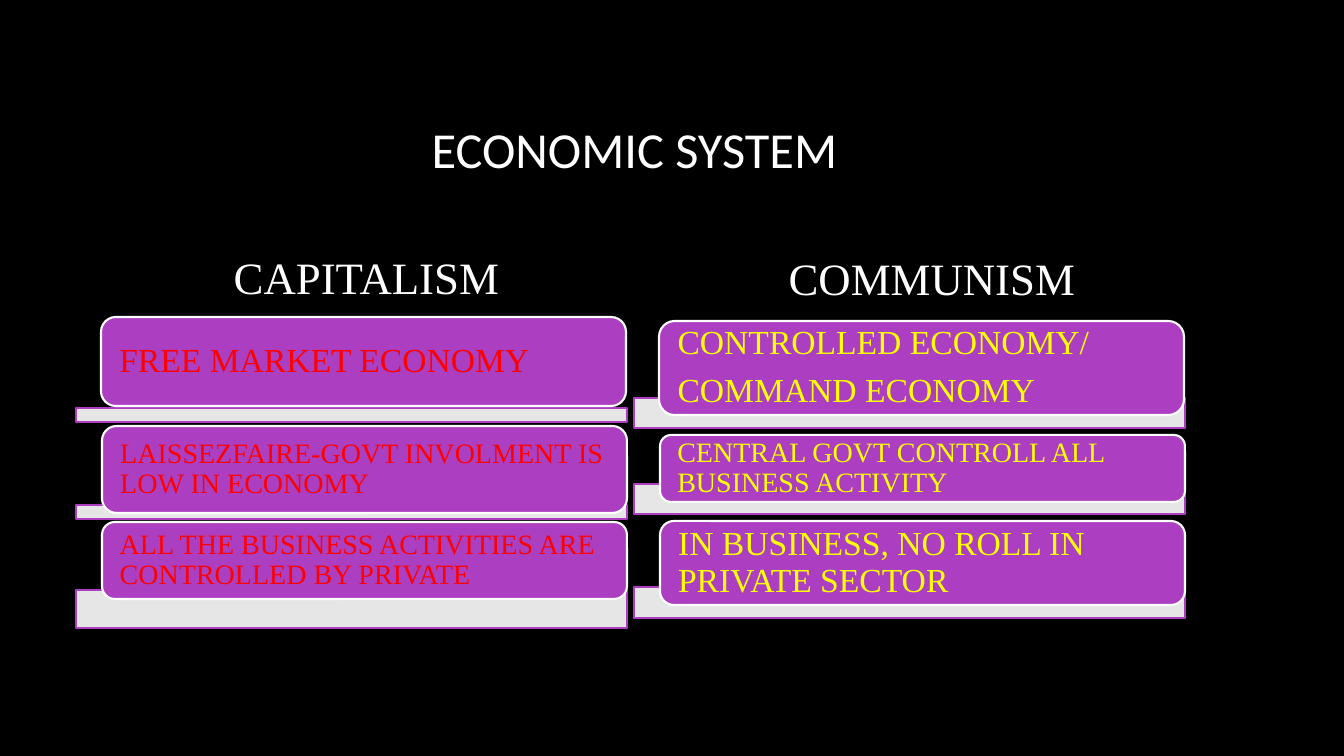
from lxml import etree
from pptx import Presentation
from pptx.dml.color import RGBColor
from pptx.enum.shapes import MSO_SHAPE
from pptx.enum.text import MSO_ANCHOR, PP_ALIGN
from pptx.oxml.ns import qn
from pptx.util import Emu, Pt

RECT, ROUNDED = MSO_SHAPE.RECTANGLE, MSO_SHAPE.ROUNDED_RECTANGLE
MIDDLE, BOTTOM = MSO_ANCHOR.MIDDLE, MSO_ANCHOR.BOTTOM
LEFT, CENTER = PP_ALIGN.LEFT, PP_ALIGN.CENTER
EMU_PER_PX = 914400 / 100.8

THEME = {
    "black": RGBColor.from_string("000000"),
    "white": RGBColor.from_string("FFFFFF"),
    "purple": RGBColor.from_string("AC3EC1"),
    "red": RGBColor.from_string("FF0000"),
    "yellow": RGBColor.from_string("FFFF00"),
    "title_font": "Calibri",
    "body_font": "Times New Roman",
    "title_size": 36,
    "heading_size": 32,
    "large_size": 24,
    "small_size": 20,
    "line_width": 1.5,
}

SYSTEMS = [
    {
        "heading": "CAPITALISM", "heading_box": (107, 245, 519, 63),
        "color": "red", "bar_left": 76, "bar_width": 551,
        "points": [
            ("FREE MARKET ECONOMY", "large_size",
             (101, 317, 525, 89), (408, 14)),
            ("LAISSEZFAIRE-GOVT INVOLMENT IS LOW IN ECONOMY", "small_size",
             (102, 426, 525, 87), (505, 14)),
            ("ALL THE BUSINESS ACTIVITIES ARE CONTROLLED BY PRIVATE", "small_size",
             (102, 522, 525, 77), (590, 38)),
        ],
    },
    {
        "heading": "COMMUNISM", "heading_box": (672, 246, 520, 63),
        "color": "yellow", "bar_left": 634, "bar_width": 551,
        "points": [
            ("CONTROLLED ECONOMY/\nCOMMAND ECONOMY", "large_size",
             (659, 321, 525, 94), (398, 30)),
            ("CENTRAL GOVT CONTROLL ALL BUSINESS ACTIVITY", "small_size",
             (660, 435, 525, 67), (484, 30)),
            ("IN BUSINESS, NO ROLL IN PRIVATE SECTOR", "large_size",
             (660, 521, 525, 84), (587, 31)),
        ],
    },
]


def px(*lengths):
    return [Emu(round(length * EMU_PER_PX)) for length in lengths]


def write(holder, text, font, size, color, align, anchor):
    frame = holder.text_frame
    frame.word_wrap = True
    frame.vertical_anchor = anchor
    frame.text = text
    for paragraph in frame.paragraphs:
        paragraph.alignment = align
        for run in paragraph.runs:
            run.font.name = THEME[font]
            run.font.size = Pt(THEME[size])
            run.font.color.rgb = THEME[color]
    return frame


prs = Presentation()
prs.slide_width, prs.slide_height = px(1344, 756)
slide = prs.slides.add_slide(prs.slide_layouts[6])
slide.background.fill.solid()
slide.background.fill.fore_color.rgb = THEME["black"]

title = slide.shapes.add_textbox(*px(76, 68, 1117, 160))
write(title, "ECONOMIC SYSTEM", "title_font", "title_size", "white", CENTER, MIDDLE)

for system in SYSTEMS:
    heading = slide.shapes.add_textbox(*px(*system["heading_box"]))
    write(heading, system["heading"], "body_font", "heading_size", "white", CENTER, BOTTOM)

    for text, size, card_box, (bar_top, bar_height) in system["points"]:
        bar_box = (system["bar_left"], bar_top, system["bar_width"], bar_height)
        bar = slide.shapes.add_shape(RECT, *px(*bar_box))
        card = slide.shapes.add_shape(ROUNDED, *px(*card_box))
        for shape, fill, line in ((bar, "white", "purple"), (card, "purple", "white")):
            shape.shadow.inherit = False
            shape.fill.solid()
            shape.fill.fore_color.rgb = THEME[fill]
            shape.line.color.rgb = THEME[line]
            shape.line.width = Pt(THEME["line_width"])
        bar_color = bar.fill._xPr.find(qn("a:solidFill"))[0]
        etree.SubElement(bar_color, qn("a:alpha")).set("val", "90000")

        frame = write(card, text, "body_font", size, system["color"], LEFT, MIDDLE)
        frame.margin_left, frame.margin_right = px(14, 14)
        frame.margin_top = frame.margin_bottom = 0
        for paragraph in frame.paragraphs:
            paragraph.line_spacing = 0.9
            paragraph.space_after = Pt(THEME[size] * 0.35)

prs.save("out.pptx")
